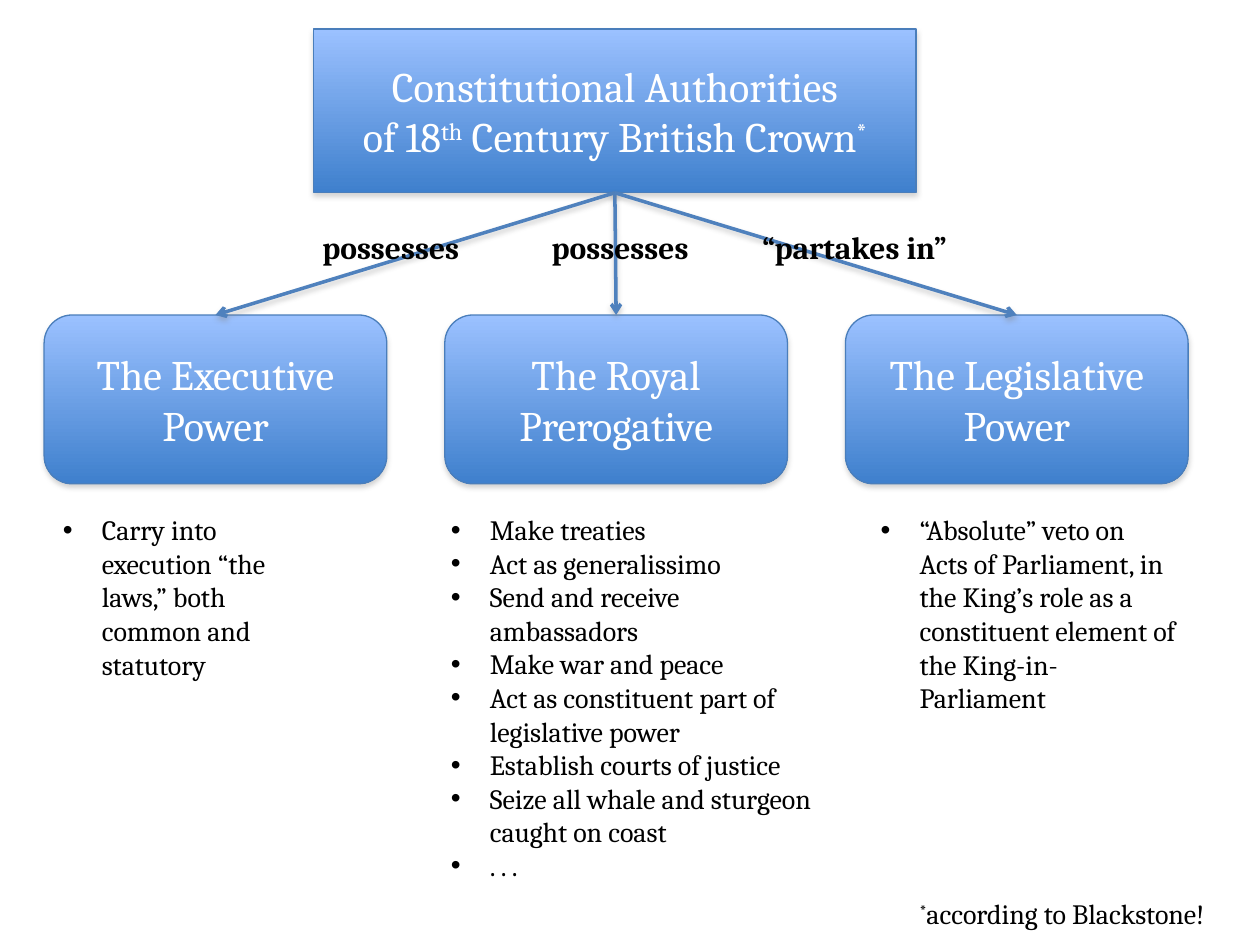
from dataclasses import dataclass
from typing import NamedTuple

import lxml.etree
import pptx
import pptx.dml.color
import pptx.enum.dml
import pptx.enum.shapes
import pptx.enum.text
import pptx.oxml
import pptx.oxml.ns
import pptx.util
from pptx.util import Inches

RGBColor = pptx.dml.color.RGBColor
Pt = pptx.util.Pt
qn = pptx.oxml.ns.qn
NAMESPACE = pptx.oxml.ns.nsdecls("a")


@dataclass(frozen=True)
class Theme:
    font: str = "Cambria"
    box_size: int = 24
    label_size: int = 18
    list_size: int = 16
    light_text: str = "FFFFFF"
    dark_text: str = "000000"
    gradient: tuple[str, str] = ("9BC1FF", "3F80CD")
    outline: str = "4A7EBB"
    arrow: str = "4F81BD"
    shadow: str = "808080"


THEME = Theme()
BOX_FORMAT = {"size": Pt(THEME.box_size), "name": THEME.font, "bold": False}
LABEL_FORMAT = {"size": Pt(THEME.label_size), "name": THEME.font, "bold": True}
LIST_FORMAT = {"size": Pt(THEME.list_size), "name": THEME.font, "bold": False}


class Area(NamedTuple):
    left: float
    top: float
    width: float
    height: float


class Span(NamedTuple):
    text: str
    raised: bool = False


class Branch(NamedTuple):
    heading: str
    label: str
    label_left: float
    label_width: float
    list_area: Area
    items: tuple[str, ...]


TITLE_AREA = Area(2.49, 0.23, 4.78, 1.3)
TITLE_SPANS = (
    Span("Constitutional Authorities\nof 18"),
    Span("th", True),
    Span(" Century British Crown"),
    Span("*", True),
)
FOOTNOTE_AREA = Area(7.2, 7.07, 2.71, 0.37)
FOOTNOTE_SPANS = (Span("*", True), Span("according to Blackstone!"))
FIRST_BOX = Area(0.35, 2.5, 2.72, 1.34)
BOX_STEP = 3.18
LABEL_TOP, LABEL_HEIGHT = 1.76, 0.4
BULLET_INDENT = Inches(0.31)

BRANCHES = (
    Branch(
        "The Executive Power", "possesses", 2.46, 1.47, Area(0.4, 4.02, 2.14, 1.45),
        ("Carry into execution “the laws,” both common and statutory",),
    ),
    Branch(
        "The Royal Prerogative", "possesses", 4.28, 1.47, Area(3.48, 4.02, 3.1, 3.06),
        (
            "Make treaties",
            "Act as generalissimo",
            "Send and receive\nambassadors",
            "Make war and peace",
            "Act as constituent part of legislative power",
            "Establish courts of justice",
            "Seize all whale and sturgeon caught on coast",
            ". . .",
        ),
    ),
    Branch(
        "The Legislative Power", "“partakes in”", 5.95, 1.93, Area(6.89, 4.02, 2.54, 1.72),
        ("“Absolute” veto on Acts of Parliament, in the King’s role as a "
         "constituent element of the King-in-Parliament",),
    ),
)


def write_spans(paragraph, spans: tuple[Span, ...], font_format: dict, color: str) -> None:
    for span in spans:
        for index, line in enumerate(span.text.split("\n")):
            if index:
                paragraph.add_line_break()
            run = paragraph.add_run()
            run.text = line
            for name, value in font_format.items():
                setattr(run.font, name, value)
            run.font.color.rgb = RGBColor.from_string(color)
            if span.raised:
                run.font._element.set("baseline", "30000")


def add_shadow(shape, opacity: int, distance: float) -> None:
    """Give the shape a soft shadow straight below it; distance is in points."""
    properties = shape._element.spPr
    for effects in properties.findall(qn("a:effectLst")):
        properties.remove(effects)
    properties.append(pptx.oxml.parse_xml(
        f'<a:effectLst {NAMESPACE}><a:outerShdw blurRad="{Pt(3.1)}" dist="{Pt(distance)}" '
        f'dir="5400000" rotWithShape="0"><a:srgbClr val="{THEME.shadow}">'
        f'<a:alpha val="{opacity * 1000}"/></a:srgbClr></a:outerShdw></a:effectLst>'
    ))


def format_box(shape, spans: tuple[Span, ...]) -> None:
    shape.fill.gradient()
    shape.fill.gradient_angle = 270
    for stop, color in zip(shape.fill.gradient_stops, THEME.gradient):
        stop.color.rgb = RGBColor.from_string(color)
    shape.line.color.rgb = RGBColor.from_string(THEME.outline)
    shape.line.width = Pt(0.75)
    add_shadow(shape, 35, 1.8)
    frame = shape.text_frame
    frame.word_wrap = True
    frame.auto_size = pptx.enum.text.MSO_AUTO_SIZE.NONE
    frame.vertical_anchor = pptx.enum.text.MSO_ANCHOR.MIDDLE
    paragraph = frame.paragraphs[0]
    paragraph.alignment = pptx.enum.text.PP_ALIGN.CENTER
    write_spans(paragraph, spans, BOX_FORMAT, THEME.light_text)


def add_title(slide):
    title = slide.shapes.title
    for name, value in TITLE_AREA._asdict().items():
        setattr(title, name, Inches(value))
    title._element.spPr.append(pptx.oxml.parse_xml(
        f'<a:prstGeom {NAMESPACE} prst="roundRect"><a:avLst/></a:prstGeom>'
    ))
    format_box(title, TITLE_SPANS)
    return title


def add_box(slide, area: Area, heading: str):
    kind = pptx.enum.shapes.MSO_SHAPE.ROUNDED_RECTANGLE
    box = slide.shapes.add_shape(kind, *map(Inches, area))
    format_box(box, (Span(heading),))
    return box


def add_arrow(slide, start, end) -> None:
    """Join the bottom of the start box to the top of the end box."""
    kind = pptx.enum.shapes.MSO_CONNECTOR.STRAIGHT
    arrow = slide.shapes.add_connector(kind, 0, 0, 0, 0)
    arrow.begin_connect(start, 2)
    arrow.end_connect(end, 0)
    arrow.line.color.rgb = RGBColor.from_string(THEME.arrow)
    arrow.line.width = Pt(2)
    line = arrow._element.spPr.find(qn("a:ln"))
    lxml.etree.SubElement(line, qn("a:tailEnd"), type="arrow")
    add_shadow(arrow, 38, 1.6)


def add_text(slide, area: Area, spans: tuple[Span, ...], font_format: dict) -> None:
    frame = slide.shapes.add_textbox(*map(Inches, area)).text_frame
    frame.word_wrap = False
    frame.auto_size = pptx.enum.text.MSO_AUTO_SIZE.SHAPE_TO_FIT_TEXT
    write_spans(frame.paragraphs[0], spans, font_format, THEME.dark_text)


def add_bullets(slide, area: Area, items: tuple[str, ...]) -> None:
    frame = slide.shapes.add_textbox(*map(Inches, area)).text_frame
    frame.word_wrap = True
    frame.auto_size = pptx.enum.text.MSO_AUTO_SIZE.SHAPE_TO_FIT_TEXT
    for index, item in enumerate(items):
        paragraph = frame.add_paragraph() if index else frame.paragraphs[0]
        write_spans(paragraph, (Span(item),), LIST_FORMAT, THEME.dark_text)
        properties = paragraph._element.get_or_add_pPr()
        properties.set("marL", str(BULLET_INDENT))
        properties.set("indent", str(-BULLET_INDENT))
        lxml.etree.SubElement(properties, qn("a:buFont"), typeface="Arial")
        lxml.etree.SubElement(properties, qn("a:buChar"), char="•")


def main() -> None:
    presentation = pptx.Presentation()
    presentation.slide_width, presentation.slide_height = Inches(10), Inches(7.5)
    slide = presentation.slides.add_slide(presentation.slide_layouts.get_by_name("Title Only"))
    title = add_title(slide)
    for index, branch in enumerate(BRANCHES):
        area = FIRST_BOX._replace(left=FIRST_BOX.left + index * BOX_STEP)
        box = add_box(slide, area, branch.heading)
        add_arrow(slide, title, box)
        add_bullets(slide, branch.list_area, branch.items)
        label_area = Area(branch.label_left, LABEL_TOP, branch.label_width, LABEL_HEIGHT)
        add_text(slide, label_area, (Span(branch.label),), LABEL_FORMAT)
    add_text(slide, FOOTNOTE_AREA, FOOTNOTE_SPANS, LIST_FORMAT)
    presentation.save("out.pptx")


if __name__ == "__main__":
    main()
